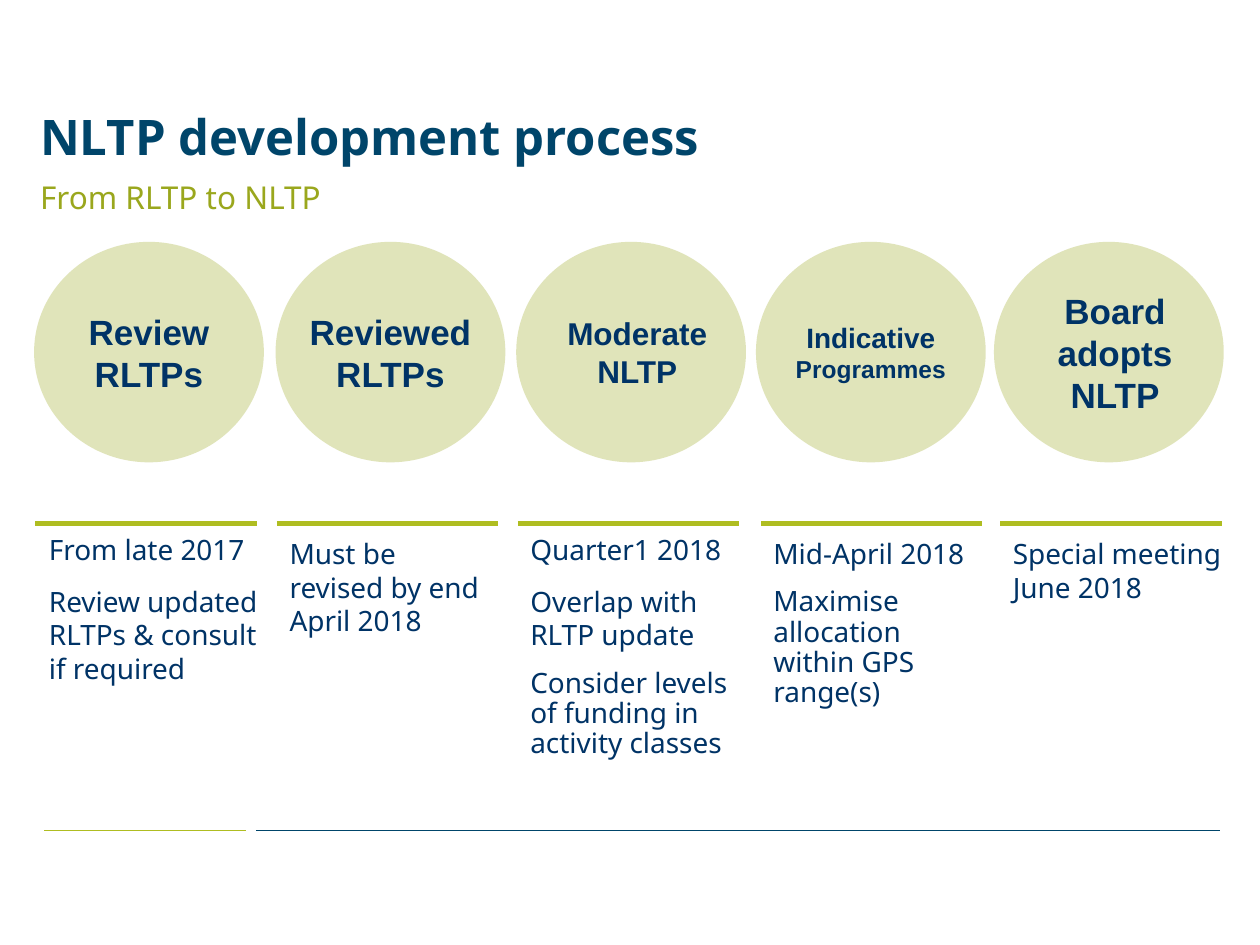
from lxml import etree
from pptx import Presentation
from pptx.dml.color import RGBColor
from pptx.enum.shapes import MSO_CONNECTOR, MSO_SHAPE
from pptx.enum.text import MSO_ANCHOR as Anchor, MSO_AUTO_SIZE as AutoSize, PP_ALIGN as Align
from pptx.oxml.ns import qn
from pptx.util import Pt

NAVY, TEAL, OLIVE, LIME = "003366", "00456A", "9AA71D", "AFBD21"


def color(hex_string):
    return RGBColor.from_string(hex_string)


def add_rule(left, right, y, line_color, width):
    rule = slide.shapes.add_connector(MSO_CONNECTOR.STRAIGHT, Pt(left), Pt(y), Pt(right), Pt(y))
    rule.line.color.rgb = color(line_color)
    rule.line.width = Pt(width)
    etree.SubElement(rule._element.spPr, qn("a:effectLst"))


presentation = Presentation()
presentation.slide_width, presentation.slide_height = Pt(720), Pt(540)
slide = presentation.slides.add_slide(presentation.slide_layouts[5])

# Footer rules
add_rule(25.2, 140.4, 474.5, LIME, 0.75)
add_rule(146.2, 697, 474.5, TEAL, 0.75)

# Title and subtitle
title = slide.shapes.title
title.left, title.top, title.width, title.height = Pt(15.8), Pt(49), Pt(680), Pt(49.7)
subtitle = slide.shapes.add_textbox(Pt(15.8), Pt(100.8), Pt(680), Pt(28))
headings = [
    (title, "NLTP development process", 28, TEAL, True, Anchor.BOTTOM),
    (subtitle, "From RLTP to NLTP", 18, OLIVE, False, Anchor.TOP),
]
for shape, text, size, font_color, bold, anchor in headings:
    text_frame = shape.text_frame
    text_frame.text = text
    text_frame.word_wrap = True
    text_frame.auto_size = AutoSize.NONE
    text_frame.vertical_anchor = anchor
    paragraph = text_frame.paragraphs[0]
    paragraph.alignment = Align.LEFT
    paragraph.line_spacing = 0.9
    font = paragraph.runs[0].font
    font.name, font.size, font.bold = "Noto Sans", Pt(size), bold
    font.color.rgb = color(font_color)

# Steps: circle left, circle inset, (label, size) runs,
#        rule left, text left, text width, (text, line spacing) paragraphs
steps = [
    (19.5, 0, [("Review RLTPs", 20)], 20.2, 20.9, 136.8,
     [("From late 2017", 0.9), ("Review updated RLTPs & consult if required", 1)]),
    (157.5, 0, [("Reviewed RLTPs", 20)], 158.2, 158.4, 126.7,
     [("Must be revised by end April 2018", 1)]),
    (295, 7.2, [("Moderate NLTP", 18)], 296, 296, 136,
     [("Quarter1 2018", 0.9), ("Overlap with RLTP update", 1),
      ("Consider levels of funding in activity classes", 0.9)]),
    (432, 0, [("Indicative ", 16), ("Programmes", 14)], 434.9, 434.9, 132.5,
     [("Mid-April 2018", 1), ("Maximise allocation within GPS range(s)", 0.9)]),
    (568, 7.2, [("Board adopts NLTP", 20)], 571.7, 571.7, 139.7,
     [("Special meeting June 2018", 1)]),
]
for circle_left, inset, labels, rule_left, text_left, text_width, details in steps:
    # Rule above the details
    add_rule(rule_left, rule_left + 126.5, 299, LIME, 3)

    # Details
    box = slide.shapes.add_textbox(Pt(text_left), Pt(303.1), Pt(text_width), Pt(158.4))
    text_frame = box.text_frame
    text_frame.word_wrap = True
    text_frame.text = "\n".join(text for text, _ in details)
    for index, (paragraph, (_, spacing)) in enumerate(zip(text_frame.paragraphs, details)):
        paragraph.line_spacing = spacing
        paragraph.space_before = Pt(10 if index else 0)
        font = paragraph.runs[0].font
        font.name, font.size = "Noto Sans", Pt(16)
        font.color.rgb = color(NAVY)

    # Translucent circle with its label
    circle = slide.shapes.add_shape(MSO_SHAPE.OVAL, Pt(circle_left), Pt(138.2), Pt(131.3), Pt(126))
    circle.shadow.inherit = False
    circle.line.fill.background()
    circle.fill.solid()
    circle.fill.fore_color.rgb = color(OLIVE)
    fill_color = circle._element.spPr.find(qn("a:solidFill")).find(qn("a:srgbClr"))
    etree.SubElement(fill_color, qn("a:alpha"), val="30000")
    text_frame = circle.text_frame
    text_frame.word_wrap = True
    text_frame.vertical_anchor = Anchor.MIDDLE
    text_frame.margin_left, text_frame.margin_right = Pt(inset), Pt(0)
    paragraph = text_frame.paragraphs[0]
    paragraph.alignment = Align.CENTER
    for label, size in labels:
        run = paragraph.add_run()
        run.text = label
        run.font.name, run.font.size, run.font.bold = "Arial", Pt(size), True
        run.font.color.rgb = color(NAVY)

presentation.save("out.pptx")
